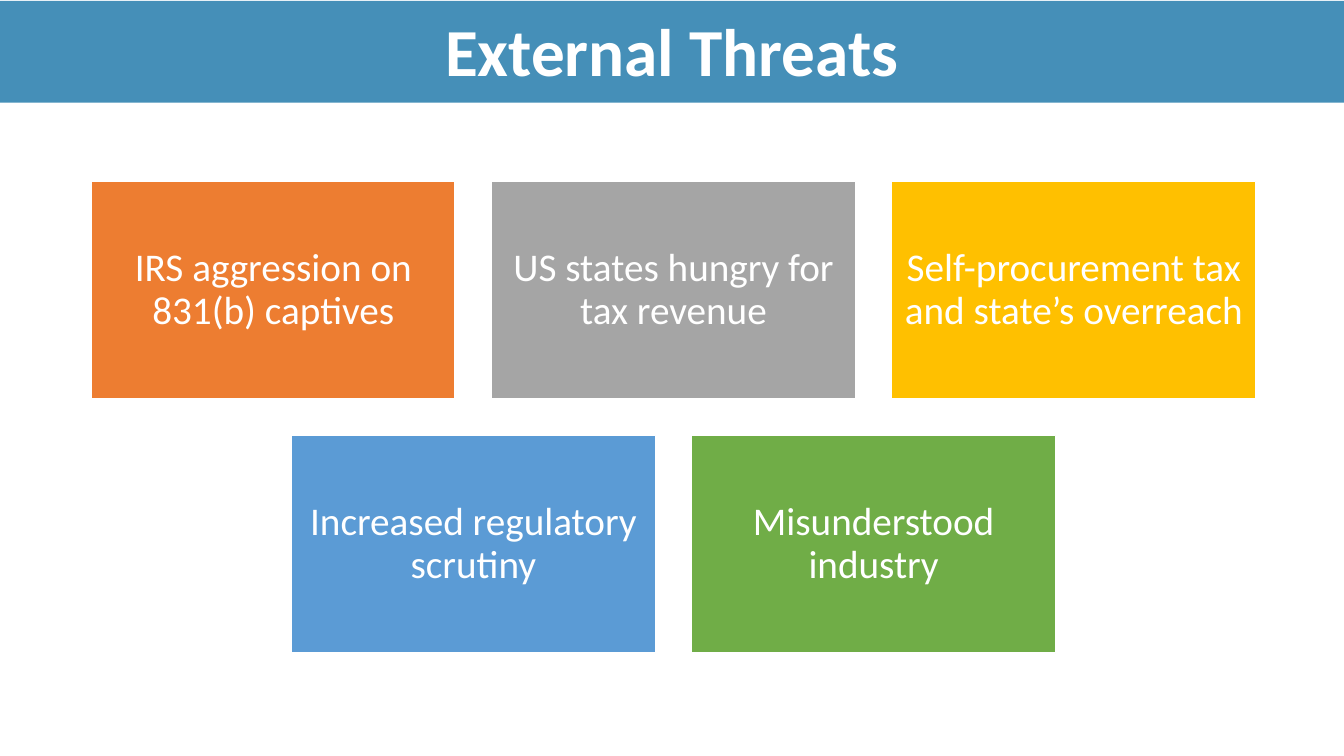
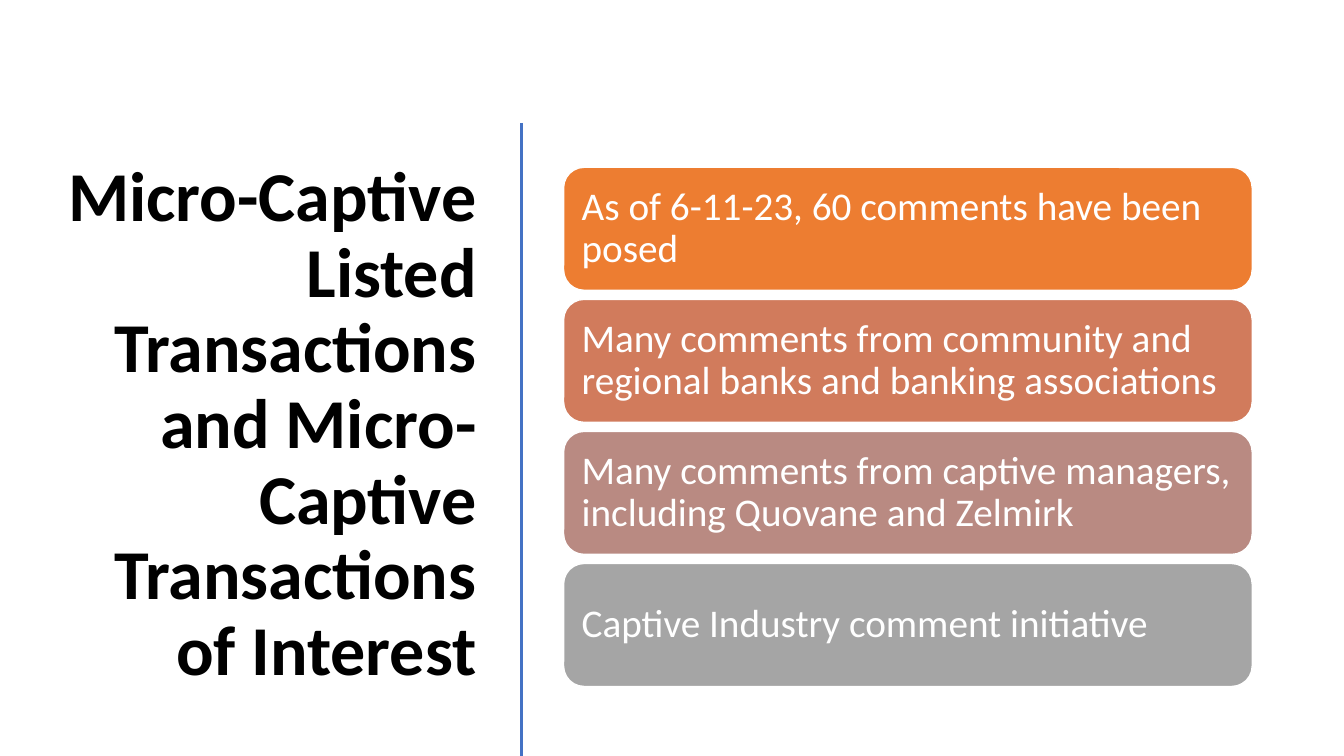
from lxml import etree
from pptx import Presentation
from pptx.dml.color import RGBColor
from pptx.enum.shapes import MSO_CONNECTOR, MSO_SHAPE
from pptx.enum.text import MSO_ANCHOR, MSO_AUTO_SIZE, PP_ALIGN
from pptx.oxml.ns import qn
from pptx.util import Inches, Pt

FONT = "Calibri"
WHITE = RGBColor(0xFF, 0xFF, 0xFF)
BLACK = RGBColor(0x00, 0x00, 0x00)
BAND_BLUE = RGBColor(0x45, 0x8F, 0xB8)
RULE_BLUE = RGBColor(0x44, 0x72, 0xC4)
ORANGE = RGBColor(0xED, 0x7D, 0x31)
TERRACOTTA = RGBColor(0xD1, 0x7B, 0x5C)
ROSE = RGBColor(0xB9, 0x8A, 0x82)
GRAY = RGBColor(0xA5, 0xA5, 0xA5)
GOLD = RGBColor(0xFF, 0xC0, 0x00)
BLUE = RGBColor(0x5B, 0x9B, 0xD5)
GREEN = RGBColor(0x70, 0xAD, 0x47)


def set_title(s, text, box, size, color, align):
    """Place and format the title placeholder of a slide."""
    title = s.shapes.title
    title.left, title.top, title.width, title.height = map(Inches, box)
    tf = title.text_frame
    tf.text = text
    tf.word_wrap = True
    tf.auto_size = MSO_AUTO_SIZE.NONE
    tf.vertical_anchor = MSO_ANCHOR.MIDDLE
    p = tf.paragraphs[0]
    p.alignment = align
    p.line_spacing = 0.9
    p.font.name, p.font.size, p.font.bold = FONT, Pt(size), True
    p.font.color.rgb = color
    return title


def add_card(s, kind, box, text, fill, align):
    """Add a filled, white-edged shape with white text."""
    sp = s.shapes.add_shape(kind, *map(Inches, box))
    sp.shadow.inherit = False
    sp.fill.solid()
    sp.fill.fore_color.rgb = fill
    sp.line.color.rgb = WHITE
    sp.line.width = Pt(1)
    tf = sp.text_frame
    tf.text = text
    tf.word_wrap = True
    tf.vertical_anchor = MSO_ANCHOR.MIDDLE
    tf.margin_left = tf.margin_right = Inches(0.12)
    tf.margin_top = tf.margin_bottom = Inches(0.12)
    p = tf.paragraphs[0]
    p.alignment = align
    p.line_spacing = 0.9
    p.font.name, p.font.size = FONT, Pt(28)
    p.font.color.rgb = WHITE


prs = Presentation()
prs.slide_width, prs.slide_height = Inches(13.33), Inches(7.5)
title_only = prs.slide_layouts[5]

# External threats: centred rows of cards under a title band
s = prs.slides.add_slide(title_only)
title = set_title(s, "External Threats", (0, 0.01, 13.33, 1.07), 48, WHITE,
                  PP_ALIGN.CENTER)
band = s.shapes.add_shape(MSO_SHAPE.RECTANGLE, 0, Inches(0.01),
                          prs.slide_width, Inches(1.01))
band.shadow.inherit = False
band.fill.solid()
band.fill.fore_color.rgb = BAND_BLUE
band.line.fill.background()
title._element.addprevious(band._element)  # band goes behind the title

threat_rows = [
    [("IRS aggression on 831(b) captives", ORANGE),
     ("US states hungry for tax revenue", GRAY),
     ("Self-procurement tax and state’s overreach", GOLD)],
    [("Increased regulatory scrutiny", BLUE),
     ("Misunderstood industry", GREEN)],
]
card_w, card_h, gap, center = 3.61, 2.16, 0.36, 6.68
for i, row in enumerate(threat_rows):
    left = center - (len(row) * (card_w + gap) - gap) / 2
    top = 1.8 + i * (card_h + gap)
    for j, (text, fill) in enumerate(row):
        box = (left + j * (card_w + gap), top, card_w, card_h)
        add_card(s, MSO_SHAPE.RECTANGLE, box, text, fill, PP_ALIGN.CENTER)

# Comments: title at left, vertical rule, stacked bars at right
s = prs.slides.add_slide(title_only)
set_title(s, "Micro-Captive Listed Transactions and Micro-Captive "
          "Transactions of Interest", (0.52, 1.17, 4.31, 6.11), 50, BLACK,
          PP_ALIGN.RIGHT)
rule = s.shapes.add_connector(MSO_CONNECTOR.STRAIGHT, Inches(5.17),
                              Inches(1.22), Inches(5.17), Inches(7.5))
rule.line.color.rgb = RULE_BLUE
rule.line.width = Pt(2)
etree.SubElement(rule._element.spPr, qn("a:effectLst"))

comments = [
    ("As of 6-11-23, 60 comments have been posed", ORANGE),
    ("Many comments from community and regional banks and banking "
     "associations", TERRACOTTA),
    ("Many comments from captive managers, including Quovane and Zelmirk",
     ROSE),
    ("Captive Industry comment initiative", GRAY),
]
bar_h, bar_gap = 1.22, 0.09
for i, (text, fill) in enumerate(comments):
    box = (5.59, 1.66 + i * (bar_h + bar_gap), 6.83, bar_h)
    add_card(s, MSO_SHAPE.ROUNDED_RECTANGLE, box, text, fill, PP_ALIGN.LEFT)

prs.save("out.pptx")
